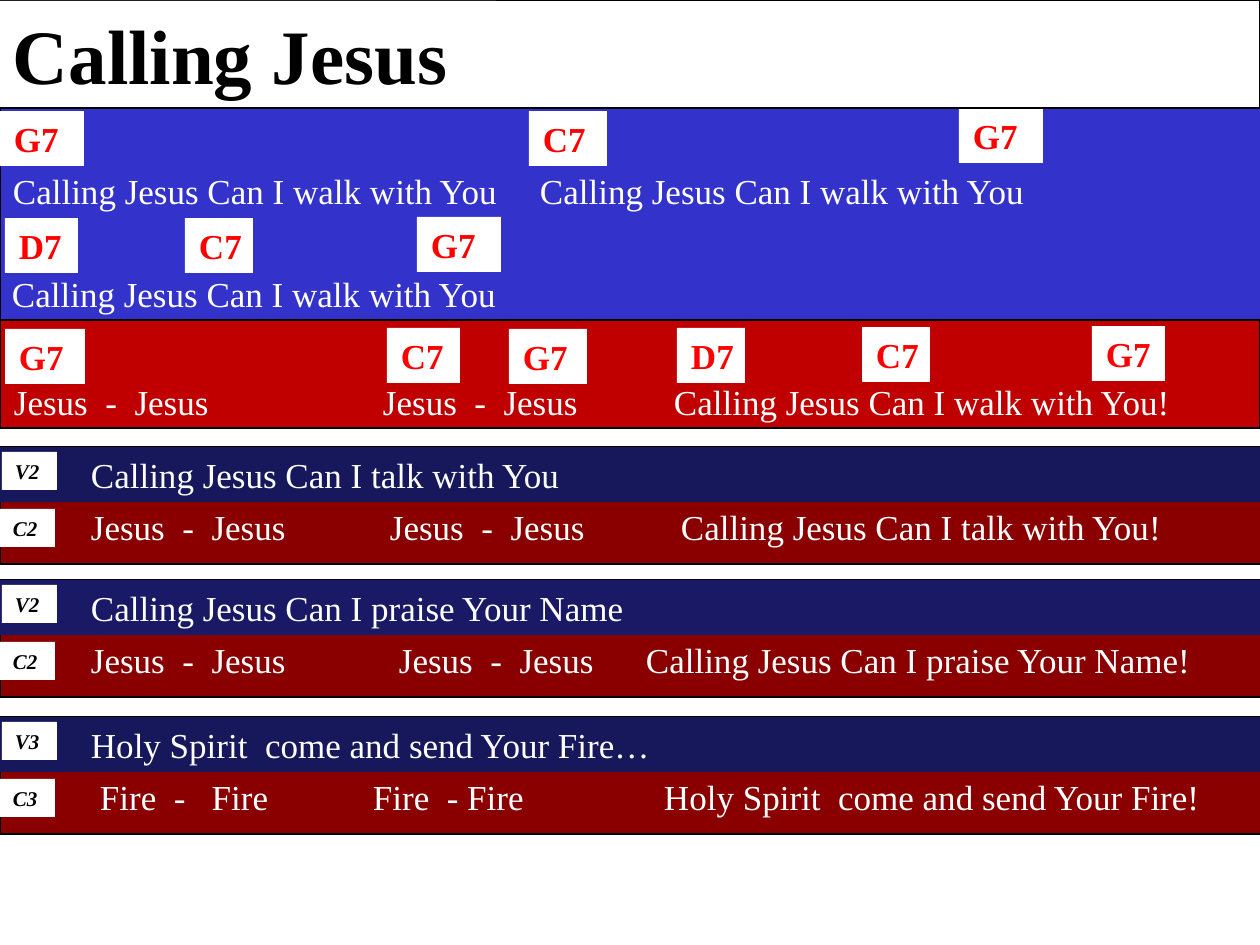
from lxml import etree
from pptx import Presentation
from pptx.dml.color import RGBColor
from pptx.enum.shapes import MSO_SHAPE
from pptx.enum.text import MSO_ANCHOR, PP_ALIGN
from pptx.oxml.ns import qn
from pptx.util import Pt

RECT = MSO_SHAPE.RECTANGLE
MIDDLE = MSO_ANCHOR.MIDDLE
LEFT = PP_ALIGN.LEFT
SCALE = 914400 / 126
FONT = "Times New Roman"
INSET = 13
ROW = 55
COLORS = {
    "white": "FFFFFF", "black": "000000", "chord": "FF0000", "verse": "3333CC",
    "chorus": "C00000", "navy": "17175C", "indigo": "191966", "maroon": "8A0000",
}


def emu(px):
    """Turn pixels into EMU."""
    return round(px * SCALE)


def rgb(name):
    """Look up a named colour."""
    return RGBColor.from_string(COLORS[name])


def bar(s, box, fill, outlined=True):
    """Draw a filled rectangle, with a thin black line if outlined."""
    sp = s.shapes.add_shape(RECT, *map(emu, box))
    sp.shadow.inherit = False
    sp.fill.solid()
    sp.fill.fore_color.rgb = rgb(fill)
    if outlined:
        sp.line.color.rgb = rgb("black")
        sp.line.width = Pt(0.75)
    else:
        sp.line.fill.background()
    return sp


def write(sp, text, size, color, inset=INSET, bold=False, italic=False):
    """Put one left-aligned line into a shape and return its paragraph."""
    tf = sp.text_frame
    tf.text = text
    tf.word_wrap = False
    tf.vertical_anchor = MIDDLE
    tf.margin_left = emu(inset)
    tf.margin_right = 0
    p = tf.paragraphs[0]
    p.alignment = LEFT
    p.space_before = Pt(0)
    font = p.runs[0].font
    font.name, font.size, font.bold, font.italic = FONT, Pt(size), bold, italic
    font.color.rgb = rgb(color)
    return p


def lyric(s, top, phrases):
    """Write a line of phrases, each given as (left, words), on tab stops."""
    sp = s.shapes.add_textbox(0, emu(top), emu(1260), emu(ROW))
    start = phrases[0][0]
    p = write(sp, "\t".join(words for _, words in phrases), 20, "white", start)
    sp.text_frame.word_wrap = True
    if len(phrases) > 1:
        tabs = etree.SubElement(p._p.get_or_add_pPr(), qn("a:tabLst"))
        for left, _ in phrases[1:]:
            etree.SubElement(tabs, qn("a:tab"), pos=str(emu(left - start)), algn="l")


def chord_section(s, box, fill, lines, chords):
    """Draw a band with lyric lines and chord labels placed inside it."""
    bar(s, box, fill)
    left, top = box[:2]
    for dy, phrases in lines:
        lyric(s, top + dy, phrases)
    for dx, dy, width, name in chords:
        sp = bar(s, (left + dx, top + dy, width, ROW), "white", False)
        write(sp, name, 20, "chord", 14, bold=True)


def verse_pair(s, top, shade, labels, verse, chorus):
    """Draw a verse row over a chorus row, each with a label."""
    bar(s, (0, top + 52, 1262, 65), "maroon")
    bar(s, (0, top, 1261, 54), "verse")
    bar(s, (0, top, 1260, ROW), shade, False)
    lyric(s, top, [(91, verse)])
    lyric(s, top + 52, chorus)
    for left, dy, label in zip((2, 0), (5, 62), labels):
        sp = bar(s, (left, top + dy, 55, 38), "white", False)
        write(sp, label, 12, "black", bold=True, italic=True)


def title_bar(s, box, text):
    """Draw the title strip and bring the title placeholder in front of it."""
    left, top, _, height = box
    bar(s, box, "white")
    title = s.shapes.title
    s.shapes._spTree.append(title._element)
    title.left, title.top = emu(left - 1), emu(top + 1)
    title.width, title.height = emu(496), emu(height - 2)
    title.fill.solid()
    title.fill.fore_color.rgb = rgb("white")
    write(title, text, 44, "black", bold=True)


def main():
    """Build the song slide."""
    prs = Presentation()
    prs.slide_width, prs.slide_height = emu(1260), emu(945)
    s = prs.slides.add_slide(prs.slide_layouts[5])
    walk = "Calling Jesus Can I walk with You"
    jesus = "Jesus  -  Jesus"
    chord_section(
        s, (0, 108, 1261, 213), "verse",
        [(55, [(13, walk), (540, walk)]), (158, [(12, walk)])],
        [(0, 3, 84, "G7"), (529, 3, 78, "C7"), (959, 0, 84, "G7"),
         (5, 110, 73, "D7"), (185, 110, 68, "C7"), (417, 109, 84, "G7")])
    chord_section(
        s, (0, 320, 1260, 108), "chorus",
        [(54, [(14, jesus), (383, jesus), (674, walk + "!")])],
        [(5, 9, 80, "G7"), (387, 8, 73, "C7"), (509, 9, 78, "G7"),
         (677, 8, 68, "D7"), (862, 7, 68, "C7"), (1092, 6, 73, "G7")])
    verse_pair(
        s, 447, "navy", ("V2", "C2"), "Calling Jesus Can I talk with You",
        [(91, jesus), (390, jesus), (681, "Calling Jesus Can I talk with You!")])
    verse_pair(
        s, 580, "indigo", ("V2", "C2"), "Calling Jesus Can I praise Your Name",
        [(91, jesus), (399, jesus), (646, "Calling Jesus Can I praise Your Name!")])
    verse_pair(
        s, 717, "navy", ("V3", "C3"), "Holy Spirit  come and send Your Fire…",
        [(100, "Fire  -   Fire"), (373, "Fire  - Fire"),
         (664, "Holy Spirit  come and send Your Fire!")])
    title_bar(s, (1, 0, 1259, 108), "Calling Jesus")
    prs.save("out.pptx")


if __name__ == "__main__":
    main()
